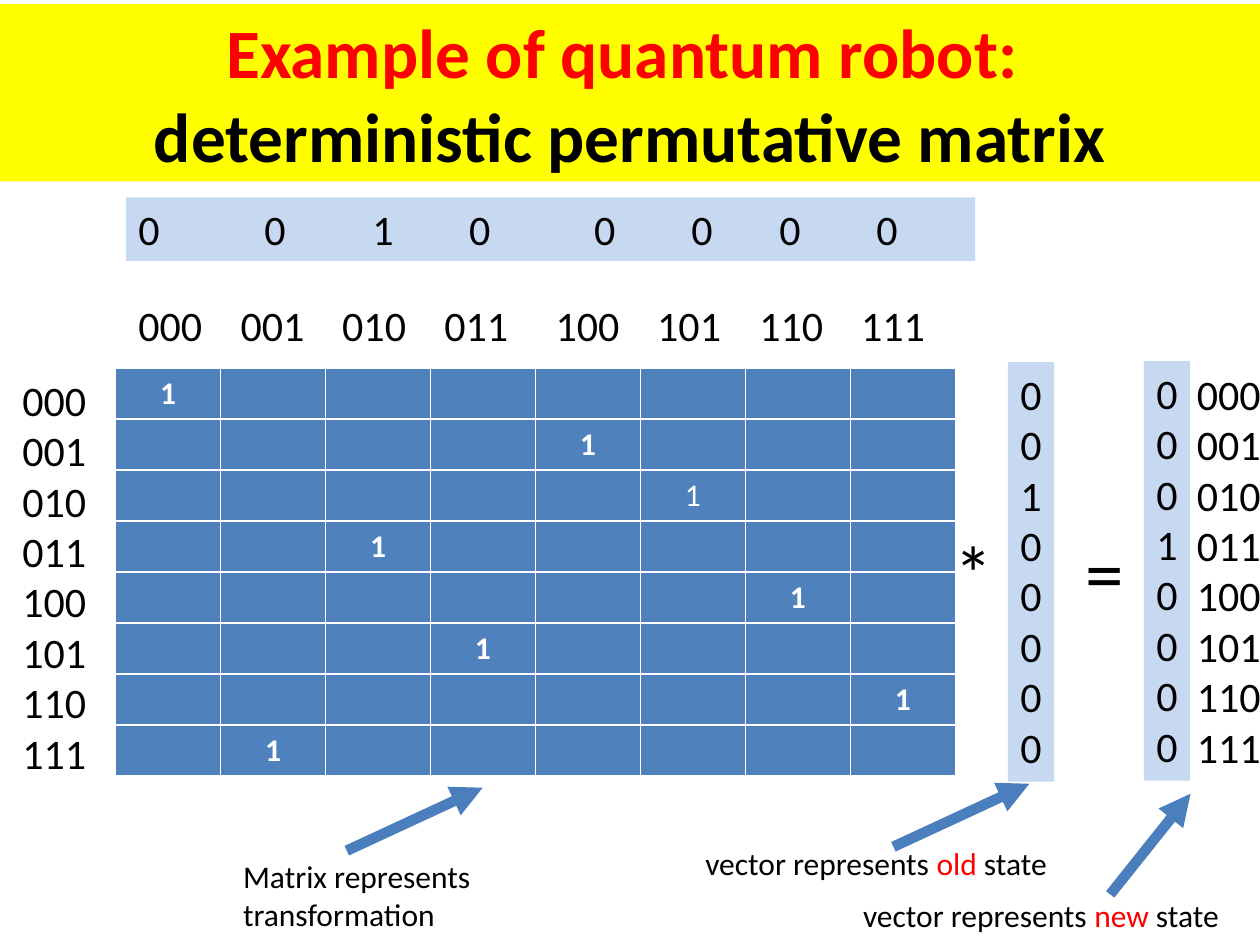
import pptx
import pptx.util
import pptx.dml.color
import pptx.enum.shapes
import pptx.enum.text
import pptx.oxml
import pptx.oxml.ns

Cm, Pt = pptx.util.Cm, pptx.util.Pt
RGB = pptx.dml.color.RGBColor.from_string
ALIGN = pptx.enum.text.PP_ALIGN
C = {"yellow": "FFFF00", "red": "FF0000", "black": "000000", "white": "FFFFFF",
     "cell": "4F81BD", "pale": "C6D9F1", "arrow": "4B7EBC"}

prs = pptx.Presentation()
prs.slide_width, prs.slide_height = Cm(25.4), Cm(19.05)
s = prs.slides.add_slide(prs.slide_layouts[6])


def add_text(box, paragraphs, size=24, fill=None, align=ALIGN.LEFT, bold=False,
             wrap=True):
    """Add a text box; each paragraph is a list of (text, colour) runs."""
    sp = s.shapes.add_textbox(*[Cm(v) for v in box])
    if fill:
        sp.fill.solid()
        sp.fill.fore_color.rgb = RGB(C[fill])
    tf = sp.text_frame
    tf.word_wrap = wrap
    for i, runs in enumerate(paragraphs):
        p = tf.add_paragraph() if i else tf.paragraphs[0]
        p.alignment = align
        p.font.size, p.font.name, p.font.bold = Pt(size), "Calibri", bold
        for text, colour in runs:
            r = p.add_run()
            r.text = text
            r.font.color.rgb = RGB(C[colour])
    return sp


def set_tabs(p, stops):
    pPr = p._p.get_or_add_pPr()
    tabs = pptx.oxml.parse_xml(f"<a:tabLst {pptx.oxml.ns.nsdecls('a')}/>")
    for stop in stops:
        tab = tabs.makeelement(pptx.oxml.ns.qn("a:tab"),
                               {"pos": str(Cm(stop)), "algn": "l"})
        tabs.append(tab)
    pPr.insert_element_before(tabs, "a:defRPr", "a:extLst")


# Title band
title = add_text((0, 0.08, 25.4, 3.58),
                 [[("Example of quantum robot: ", "red")],
                  [("deterministic permutative matrix", "black")]],
                 size=39.6, fill="yellow", align=ALIGN.CENTER, bold=True)
title.text_frame.vertical_anchor = pptx.enum.text.MSO_ANCHOR.MIDDLE

# Permutation matrix: column of the 1 in each row
ones = [0, 4, 5, 2, 6, 3, 7, 1]
n = len(ones)
matrix = s.shapes.add_table(n, n, Cm(2.33), Cm(7.42), Cm(16.93), Cm(8.23)).table
for row, one in enumerate(ones):
    for col in range(n):
        cell = matrix.cell(row, col)
        cell.fill.solid()
        cell.fill.fore_color.rgb = RGB(C["cell"])
        p = cell.text_frame.paragraphs[0]
        p.alignment = ALIGN.CENTER
        p.font.size, p.font.name = Pt(18), "Calibri"
        p.font.bold = row != 2
        p.font.color.rgb = RGB(C["white"])
        if col == one:
            p.text = "1"

# State labels and state vectors
states = [format(i, "03b") for i in range(n)]
old_state, new_state = "00100000", "00010000"
for box, items, fill in [
    ((0.2, 7.42, 2.12, 8.46), states, None),
    ((20.32, 7.3, 0.93, 8.46), old_state, "pale"),
    ((23.06, 7.28, 0.93, 8.46), new_state, "pale"),
    ((23.88, 7.3, 2.12, 8.46), states, None),
]:
    add_text(box, [[(item, "black")] for item in items], fill=fill,
             wrap=items is states)

for box, items, fill, stops in [
    ((2.54, 5.92, 18.24, 1.27), states, None,
     [2.06, 4.11, 6.17, 8.41, 10.46, 12.52, 14.57]),
    ((2.54, 3.98, 17.12, 1.28), old_state, "pale",
     [2.54, 4.72, 6.67, 9.19, 11.15, 12.92, 14.88]),
]:
    sp = add_text(box, [[("\t".join(items), "black")]], fill=fill)
    set_tabs(sp.text_frame.paragraphs[0], stops)

# Operators
for left, sign in [(19, "*"), (21.64, "=")]:
    add_text((left, 10.44, 1.27, 2.13), [[(sign, "black")]], size=44, wrap=False)

# Captions
add_text((4.65, 17.15, 6.78, 1.8),
         [[("Matrix represents transformation", "black")]], size=18)
for left, top, word in [(13.97, 16.89, "old"), (17.15, 17.93, "new")]:
    add_text((left, top, 8.18, 1.03),
             [[("vector represents ", "black"), (word, "red"), (" state", "black")]],
             size=18)

# Arrows from captions to matrix and vectors
for ends in [(6.99, 17.15, 9.73, 15.88), (18.01, 17.07, 20.75, 15.8),
             (22.38, 18.03, 24, 16)]:
    arrow = s.shapes.add_connector(pptx.enum.shapes.MSO_CONNECTOR.STRAIGHT,
                                   *[Cm(v) for v in ends])
    arrow.line.color.rgb = RGB(C["arrow"])
    arrow.line.width = Pt(6)
    for parent, tag in [(arrow.line._get_or_add_ln(), 'tailEnd type="triangle"'),
                        (arrow._element.spPr, "effectLst")]:
        parent.append(pptx.oxml.parse_xml(
            f"<a:{tag} {pptx.oxml.ns.nsdecls('a')}/>"))

prs.save("out.pptx")
